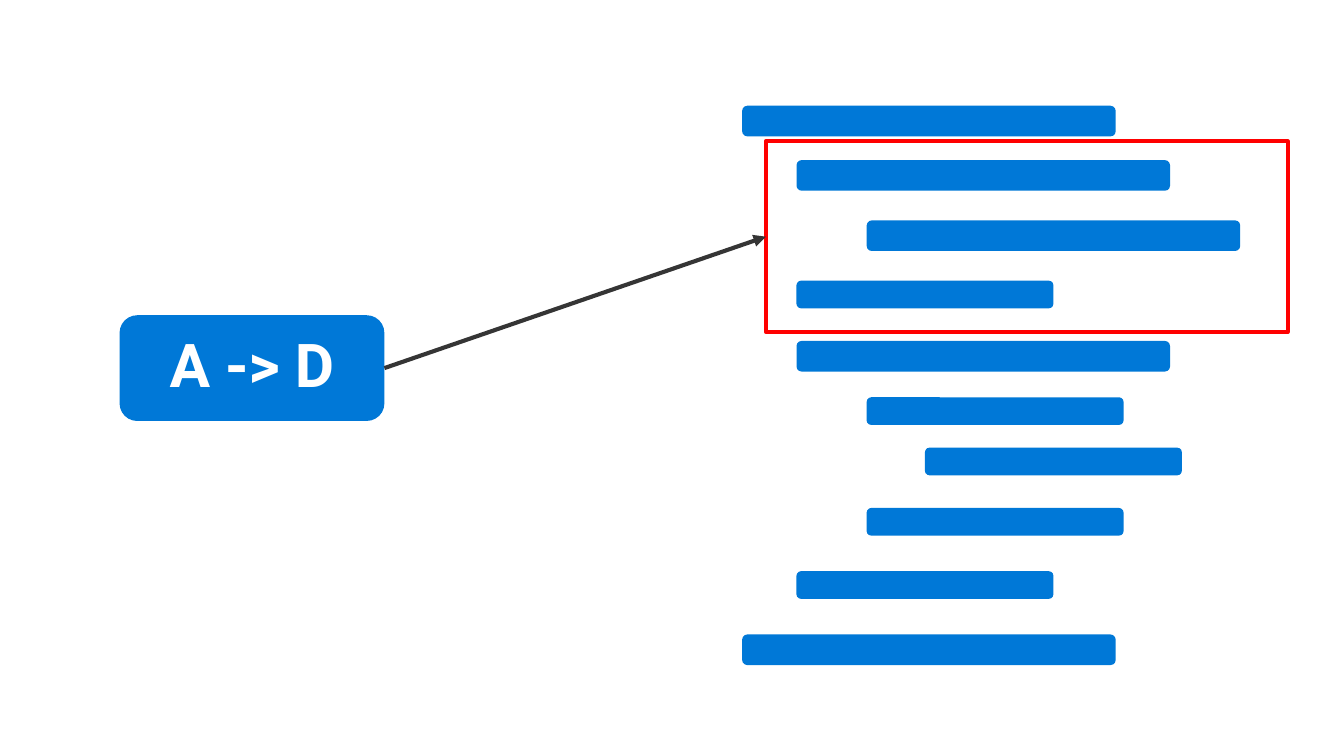
import pptx
import pptx.util
import pptx.dml.color
import pptx.enum.shapes
import pptx.enum.text
import pptx.oxml.ns
import lxml.etree

Inches = pptx.util.Inches
RGBColor = pptx.dml.color.RGBColor
MSO_SHAPE = pptx.enum.shapes.MSO_SHAPE

BLUE = RGBColor(0x00, 0x78, 0xD7)
RED = RGBColor(0xFF, 0x00, 0x00)
DARK = RGBColor(0x35, 0x35, 0x35)
WHITE = RGBColor(0xFF, 0xFF, 0xFF)

INDENTS = (7.51, 8.06, 8.77, 9.36)
LONG = (3.78, 0.31)
SHORT = (2.6, 0.28)
CODE_LINES = (
    (0, 1.07, LONG),
    (1, 1.62, LONG),
    (2, 2.23, LONG),
    (1, 2.84, SHORT),
    (1, 3.45, LONG),
    (2, 4.02, SHORT),
    (3, 4.53, SHORT),
    (2, 5.14, SHORT),
    (1, 5.78, SHORT),
    (0, 6.42, LONG),
)
LABEL_FONT = {"name": "Roboto", "size": pptx.util.Pt(44), "bold": True}
LABEL_FRAME = {
    "margin_left": Inches(0.2),
    "margin_right": Inches(0.2),
    "margin_top": Inches(0.16),
    "margin_bottom": Inches(0.16),
    "vertical_anchor": pptx.enum.text.MSO_ANCHOR.MIDDLE,
    "word_wrap": True,
}


def set_attrs(obj, values):
    """Set each attribute named in values on obj."""
    for name, value in values.items():
        setattr(obj, name, value)


def set_line(line, color):
    """Give a line its colour and the common weight."""
    line.color.rgb = color
    line.width = pptx.util.Pt(3)


def add_block(s, left, top, width, height):
    """Add a blue rounded block without an outline."""
    sp = s.shapes.add_shape(MSO_SHAPE.ROUNDED_RECTANGLE, Inches(left),
                            Inches(top), Inches(width), Inches(height))
    sp.shadow.inherit = False
    sp.fill.solid()
    sp.fill.fore_color.rgb = BLUE
    sp.line.fill.background()
    return sp


def add_label(sp, text):
    """Write a centred bold label in a block."""
    tf = sp.text_frame
    set_attrs(tf, LABEL_FRAME)
    p = tf.paragraphs[0]
    set_attrs(p, {"alignment": pptx.enum.text.PP_ALIGN.CENTER,
                  "line_spacing": 0.9})
    r = p.add_run()
    r.text = text
    set_attrs(r.font, LABEL_FONT)
    r.font.color.rgb = WHITE


def add_frame(s, left, top, width, height):
    """Add an unfilled red frame."""
    sp = s.shapes.add_shape(MSO_SHAPE.RECTANGLE, Inches(left), Inches(top),
                            Inches(width), Inches(height))
    sp.shadow.inherit = False
    sp.fill.background()
    set_line(sp.line, RED)
    return sp


def add_arrow(s, source, target):
    """Connect the right side of source to the left side of target."""
    cxn = s.shapes.add_connector(pptx.enum.shapes.MSO_CONNECTOR.STRAIGHT,
                                 0, 0, 0, 0)
    cxn.begin_connect(source, 3)
    cxn.end_connect(target, 1)
    set_line(cxn.line, DARK)
    qn = pptx.oxml.ns.qn
    ln = cxn.line._get_or_add_ln()
    lxml.etree.SubElement(ln, qn("a:tailEnd"), type="triangle")
    lxml.etree.SubElement(cxn._element.spPr, qn("a:effectLst"))


def main():
    """Build the slide and save it."""
    prs = pptx.Presentation()
    set_attrs(prs, {"slide_width": Inches(13.6), "slide_height": Inches(7.65)})
    s = prs.slides.add_slide(prs.slide_layouts[6])
    for level, top, size in CODE_LINES:
        add_block(s, INDENTS[level], top, *size)
    step = add_block(s, 1.21, 3.19, 2.68, 1.07)
    add_label(step, "A -> D")
    frame = add_frame(s, 7.75, 1.43, 5.28, 1.93)
    add_arrow(s, step, frame)
    prs.save("out.pptx")


if __name__ == "__main__":
    main()
